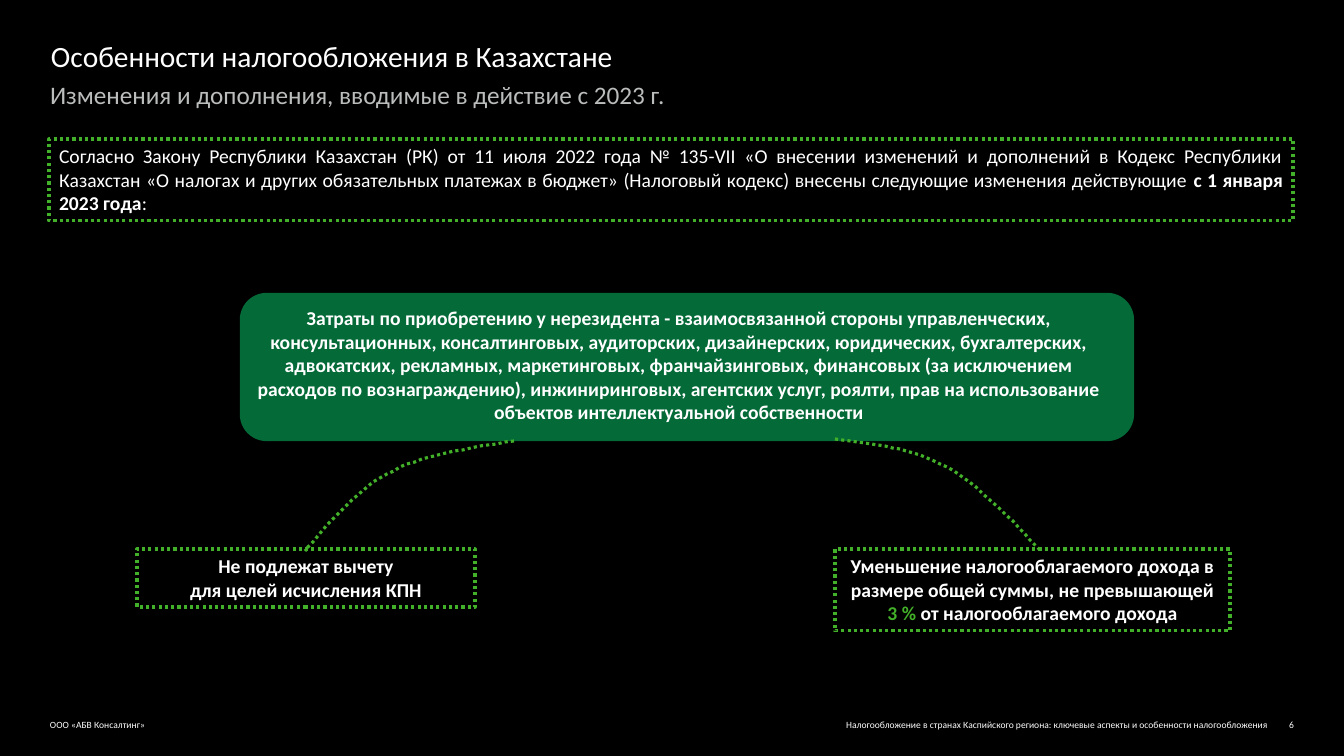
from pptx import Presentation
from pptx import util as u
from pptx.dml import color
from pptx.enum import dml, shapes, text

SCALE = 914400 / 100.8
COLOURS = {
    "black": "000000",
    "white": "FFFFFF",
    "grey": "BBBCBC",
    "green": "43B02A",
    "dark_green": "046A38",
}
ALIGN = {
    "left": text.PP_ALIGN.LEFT,
    "right": text.PP_ALIGN.RIGHT,
    "centre": text.PP_ALIGN.CENTER,
    "justify": text.PP_ALIGN.JUSTIFY,
}


def px(length):
    return u.Emu(round(length * SCALE))


def rgb(name):
    return color.RGBColor.from_string(COLOURS[name])


def add_span(para, words, size=14, bold=False, colour="white"):
    span = para.add_run()
    span.text = words
    span.font.name = "Calibri"
    span.font.size = u.Pt(size)
    span.font.bold = bold
    span.font.color.rgb = rgb(colour)


def bezier(points, steps=16):
    for step in range(1, steps + 1):
        t = step / steps
        weights = ((1 - t) ** 3, 3 * t * (1 - t) ** 2, 3 * t ** 2 * (1 - t), t ** 3)
        yield tuple(
            sum(weight * point[axis] for weight, point in zip(weights, points))
            for axis in (0, 1)
        )


class Slide:
    def __init__(self, deck):
        self.page = deck.slides.add_slide(deck.slide_layouts[6])
        self.page.background.fill.solid()
        self.page.background.fill.fore_color.rgb = rgb("black")

    def fill_text(self, shape, paragraphs, align="left", margins=(10, 5), **style):
        frame = shape.text_frame
        frame.word_wrap = True
        frame.vertical_anchor = text.MSO_ANCHOR.TOP
        frame.margin_left = frame.margin_right = px(margins[0])
        frame.margin_top = frame.margin_bottom = px(margins[1])
        for index, spans in enumerate(paragraphs):
            para = frame.add_paragraph() if index else frame.paragraphs[0]
            para.alignment = ALIGN[align]
            for words, changes in spans:
                add_span(para, words, **{**style, **changes})

    def label(self, place, words, **style):
        box = self.page.shapes.add_textbox(*map(px, place))
        self.fill_text(box, [[(words, {})]], **style)

    def dotted(self, shape):
        shape.shadow.inherit = False
        shape.fill.background()
        shape.line.color.rgb = rgb("green")
        shape.line.width = u.Pt(2.25)
        shape.line.dash_style = dml.MSO_LINE.ROUND_DOT

    def frame(self, place, paragraphs, **style):
        box = self.page.shapes.add_shape(shapes.MSO_SHAPE.RECTANGLE, *map(px, place))
        self.dotted(box)
        self.fill_text(box, paragraphs, **style)

    def panel(self, place):
        box = self.page.shapes.add_shape(
            shapes.MSO_SHAPE.ROUNDED_RECTANGLE, *map(px, place))
        box.shadow.inherit = False
        box.fill.solid()
        box.fill.fore_color.rgb = rgb("dark_green")
        box.line.color.rgb = rgb("dark_green")
        box.line.width = u.Pt(4.5)

    def curve(self, points):
        builder = self.page.shapes.build_freeform(*points[0], scale=SCALE)
        for start in range(0, len(points) - 1, 3):
            builder.add_line_segments(bezier(points[start:start + 4]), close=False)
        self.dotted(builder.convert_to_shape())


def main():
    deck = Presentation()
    deck.slide_width, deck.slide_height = px(1344), px(756)
    slide = Slide(deck)
    bare = {"margins": (0, 0)}

    slide.label((729, 719, 539, 11),
                "Налогообложение в странах Каспийского региона: "
                "ключевые аспекты и особенности налогообложения",
                size=6.8, align="right", **bare)
    slide.label((1260, 719, 34, 11), "6", size=6.8, align="right", **bare)
    slide.label((50, 719, 708, 11), "ООО «АБВ Консалтинг»", size=6.8, **bare)
    slide.label((51, 38, 1243, 37), "Особенности налогообложения в Казахстане",
                size=21, **bare)
    slide.label((50, 79, 1244, 42),
                "Изменения и дополнения, вводимые в действие с 2023 г.",
                size=18, colour="grey", **bare)

    slide.panel((243, 296, 888, 142))
    slide.frame((49, 139, 1244, 82), [[
        ("Согласно Закону Республики Казахстан (РК) от 11 июля 2022 года "
         "№ 135-VII «О внесении изменений и дополнений в Кодекс Республики "
         "Казахстан «О налогах и других обязательных платежах в бюджет» "
         "(Налоговый кодекс) внесены следующие изменения действующие ", {}),
        ("с 1 января 2023 года", {"bold": True}),
        (":", {}),
    ]], align="justify")
    slide.label((243, 301, 872, 129),
                "Затраты по приобретению у нерезидента - взаимосвязанной стороны "
                "управленческих, консультационных, консалтинговых, аудиторских, "
                "дизайнерских, юридических, бухгалтерских, адвокатских, рекламных, "
                "маркетинговых, франчайзинговых, финансовых (за исключением "
                "расходов по вознаграждению), инжиниринговых, агентских услуг, "
                "роялти, прав на использование объектов интеллектуальной "
                "собственности",
                bold=True, align="centre")

    slide.curve([(514, 441), (468, 448), (421, 455), (387, 474),
                 (352, 492), (305, 551), (305, 551)])
    slide.curve([(835, 439), (874, 444), (912, 448), (947, 467),
                 (981, 485), (1039, 549), (1039, 549)])

    slide.frame((137, 549, 338, 58), [
        [("Не подлежат вычету", {})],
        [("для целей исчисления КПН", {})],
    ], bold=True, align="centre")
    slide.frame((835, 549, 395, 82), [[
        ("Уменьшение налогооблагаемого дохода в размере общей суммы, "
         "не превышающей ", {}),
        ("3 % ", {"colour": "green"}),
        ("от налогооблагаемого дохода", {}),
    ]], bold=True, align="centre")

    deck.save("out.pptx")


if __name__ == "__main__":
    main()
